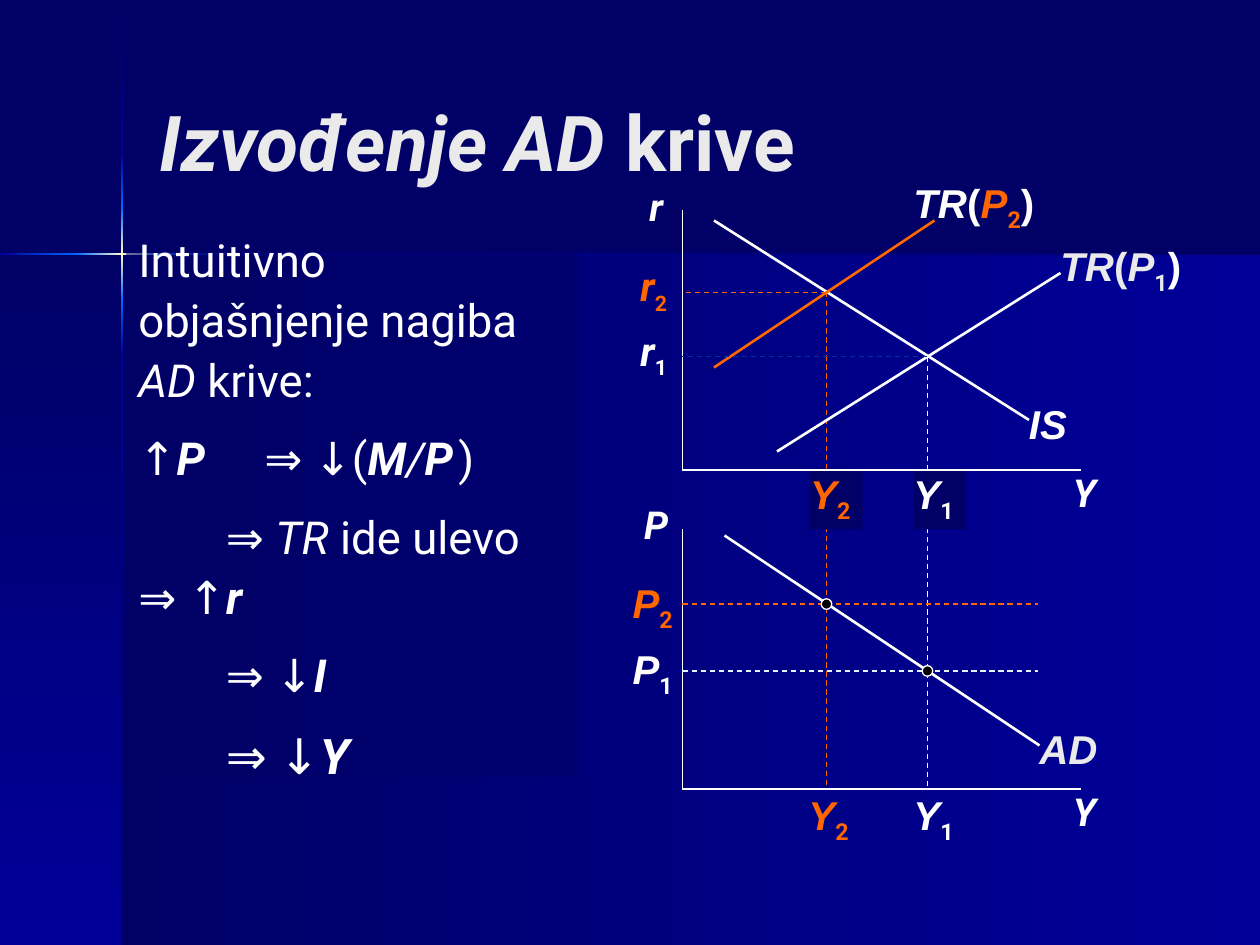
from itertools import pairwise

from lxml.etree import SubElement
from pptx import Presentation
from pptx.dml.color import RGBColor
from pptx.enum.dml import MSO_LINE
from pptx.enum.shapes import MSO_CONNECTOR, MSO_SHAPE
from pptx.enum.text import MSO_ANCHOR, MSO_AUTO_SIZE, PP_ALIGN
from pptx.oxml.ns import qn
from pptx.util import Pt

COLORS = {
    "navy": "000066", "blue": "000099", "glow": "0066FF", "spark": "FFFFCC",
    "white": "FFFFFF", "pale": "EAEAEA", "orange": "FF6600", "ice": "E0F5FF",
    "faint": "003399", "black": "000000",
}
AXIS_X, AXIS_END = 390, 618
Y1, Y2 = 530, 472.3
R1, R2 = 203.8, 167
P1, P2 = 383.4, 345.2
BI = {"bold": True, "italic": True}


def rgb(name):
    return RGBColor.from_string(COLORS[name])


def write(paragraph, text, size=26, font="Roboto", color="white",
          bold=False, italic=False, baseline=0):
    run = paragraph.add_run()
    run.text = text
    run.font.size = Pt(size)
    run.font.name = font
    run.font.color.rgb = rgb(color)
    run.font.bold = bold
    run.font.italic = italic
    if baseline:
        run.font._element.set("baseline", str(baseline * 1000))


def add_panel(slide, box, fill=None, kind=MSO_SHAPE.RECTANGLE):
    panel = slide.shapes.add_shape(kind, *map(Pt, box))
    panel.shadow.inherit = False
    panel.line.fill.background()
    if fill:
        panel.fill.solid()
        panel.fill.fore_color.rgb = rgb(fill)
    return panel


def add_gradient(slide, box, names, vertical=False):
    band = add_panel(slide, box)
    band.fill.gradient()
    band.fill.gradient_angle = 270 if vertical else 0
    stops = band._element.spPr.find(qn("a:gradFill")).find(qn("a:gsLst"))
    for stop in list(stops):
        stops.remove(stop)
    for index, name in enumerate(names):
        position = 100000 * index // (len(names) - 1)
        stop = SubElement(stops, qn("a:gs"), pos=str(position))
        SubElement(stop, qn("a:srgbClr"), val=COLORS[name])


def add_line(slide, start, end, color="white", width=1.5, dashed=False):
    line = slide.shapes.add_connector(
        MSO_CONNECTOR.STRAIGHT, *map(Pt, (*start, *end)))
    line.line.color.rgb = rgb(color)
    line.line.width = Pt(width)
    if dashed:
        line.line.dash_style = MSO_LINE.DASH
    SubElement(line._element.spPr, qn("a:effectLst"))


def add_guide(slide, start, end, color):
    add_line(slide, start, end, color, 0.75, dashed=True)


def set_frame(frame, insets=(0, 0, 0, 0), anchor=MSO_ANCHOR.TOP):
    frame.word_wrap = True
    frame.vertical_anchor = anchor
    (frame.margin_left, frame.margin_top,
     frame.margin_right, frame.margin_bottom) = map(Pt, insets)
    return frame.paragraphs[0]


def add_text(slide, box, insets=(0, 0, 0, 0), anchor=MSO_ANCHOR.TOP):
    frame = slide.shapes.add_textbox(*map(Pt, box)).text_frame
    frame.auto_size = MSO_AUTO_SIZE.NONE
    return set_frame(frame, insets, anchor)


def add_label(slide, left, top, name, sub="", color="white", font="Arial",
              sub_size=23, mask=None, width=30):
    box = (left, top, width, 34.6 if mask else 27.4)
    if mask:
        label = set_frame(add_panel(slide, box, mask).text_frame)
        label.alignment = PP_ALIGN.LEFT
    else:
        label = add_text(slide, box)
    write(label, name, 23, font, color, **BI)
    if sub:
        write(label, sub, sub_size, color=color, bold=True, baseline=-25)


def add_tr_label(slide, left, top, sub, color, price_color):
    label = add_text(slide, (left, top, 78, 27.4))
    write(label, "TR", 23, "Arial", color, **BI)
    write(label, "(", 23, "Arial", color, bold=True)
    write(label, "P", 23, "Arial", price_color, **BI)
    write(label, sub, 23, color=price_color, bold=True, baseline=-25)
    write(label, ")", 23, "Arial", bold=True)


def add_axes(slide, top, vertical_name):
    bottom = top + 148.3
    add_line(slide, (AXIS_X, top), (AXIS_X, bottom), width=1)
    add_line(slide, (AXIS_X, bottom), (AXIS_END, bottom), width=1)
    insets = (7.2, 3.6, 7.2, 3.6)
    horizontal = add_text(slide, (606, bottom - 4.3, 42, 33.8), insets)
    write(horizontal, "Y", 22, **BI)
    vertical = add_text(slide, (360, top - 19.5, 30, 33.8), insets)
    vertical.alignment = PP_ALIGN.CENTER
    write(vertical, vertical_name, 22, **BI)


def add_backdrop(slide):
    slide.background.fill.solid()
    slide.background.fill.fore_color.rgb = rgb("navy")
    add_gradient(slide, (69.8, 145.4, 650.2, 394.6), ("navy", "blue"))
    add_gradient(slide, (0, 145.4, 69.8, 394.6), ("navy", "blue"), True)
    beam = [("navy", "blue"), ("blue", "glow"), ("glow", "spark", "glow"),
            ("glow", "blue"), ("blue", "navy")]
    for (top, bottom), names in zip(pairwise((0.7, 87.1, 118.8, 171.4, 203, 540)), beam):
        add_gradient(slide, (69.1, top, 1.4, bottom - top), names, True)
    for (left, right), names in zip(pairwise((0, 43.5, 95.8, 127.4, 720)), beam[1:]):
        add_gradient(slide, (left, 144.6, right - left, 1.1), names)


def add_explanation(slide):
    panel = add_panel(slide, (72, 126, 258, 318), "navy")
    color = panel._element.spPr.find(qn("a:solidFill"))[0]
    SubElement(color, qn("a:alpha"), val="50000")
    frame = panel.text_frame
    set_frame(frame, (7.2, 3.6, 7.2, 3.6))
    italic, big = {"italic": True}, {"size": 28}
    steps = [
        (50, [("Intuitivno objašnjenje nagiba ", {}), ("AD ", italic), ("krive:", {})]),
        (72, [("↑", {}), ("P", BI), ("\t⇒ ↓(", {}), ("M", BI), ("/", italic),
              ("P", BI), (" ", {"size": 12}), (")", {})]),
        (50, [("\t⇒ ", {}), ("TR ", italic), ("ide ulevo\t⇒ ↑", {}), ("r", BI)]),
        (50, [("\t⇒ ↓", {}), ("I", BI)]),
        (50, [("\t⇒ ↓", big), ("Y", BI | big)]),
    ]
    for index, (tab, runs) in enumerate(steps):
        step = frame.add_paragraph() if index else frame.paragraphs[0]
        step.alignment = PP_ALIGN.LEFT
        step.line_spacing = 1.1
        if index:
            step.space_before = Pt(10.4)
        tabs = SubElement(step._p.get_or_add_pPr(), qn("a:tabLst"))
        SubElement(tabs, qn("a:tab"), pos=str(Pt(tab)), algn="l")
        for text, style in runs:
            write(step, text, **style)


def main():
    deck = Presentation()
    deck.slide_width, deck.slide_height = Pt(720), Pt(540)
    slide = deck.slides.add_slide(deck.slide_layouts[6])
    add_backdrop(slide)

    add_guide(slide, (Y1, R1), (Y1, 450.8), "white")
    add_guide(slide, (Y2, R2), (Y2, 450.8), "orange")
    add_label(slide, 522, 268, "Y", "1", mask="navy")
    add_label(slide, 463, 268, "Y", "2", "orange", mask="navy")

    title = add_text(slide, (84, 24, 594, 113), (7.2, 3.6, 7.2, 3.6), MSO_ANCHOR.MIDDLE)
    write(title, "Izvođenje AD ", 44, color="pale", **BI)
    write(title, "krive", 44, color="pale", bold=True)

    add_axes(slide, 120.3, "r")
    add_axes(slide, 302.5, "P")

    add_line(slide, (408, 126), (588, 240))
    add_label(slide, 588, 228, "IS")
    add_tr_label(slide, 606, 138, "1", "pale", "pale")
    add_line(slide, (444, 258), (606, 156))
    add_tr_label(slide, 522, 102, "2", "white", "orange")
    add_line(slide, (408, 210), (534, 126), "orange")
    add_line(slide, (414, 306), (594, 426))
    add_label(slide, 594, 414, "AD", color="pale", width=36)

    for price, sub, guide, color in ((P1, "1", "ice", "white"), (P2, "2", "orange", "orange")):
        add_guide(slide, (AXIS_X, price), (593, price), guide)
        add_label(slide, 361.5, price - 15, "P", sub, color)
    add_label(slide, 462, 451.5, "Y", "2", "orange")
    add_label(slide, 522, 451.5, "Y", "1")
    for rate, output, sub, guide, color in (
            (R2, Y2, "2", "orange", "orange"), (R1, Y1, "1", "faint", "white")):
        add_guide(slide, (output, rate), (AXIS_X, rate), guide)
        add_label(slide, 366, rate - 17.5, "r", sub, color, "Roboto", 21)

    for output, price in ((Y1, P1), (Y2, P2)):
        point = add_panel(slide, (output - 3, price - 3, 6, 6), "black", MSO_SHAPE.OVAL)
        point.line.color.rgb = rgb("white")
        point.line.width = Pt(0.75)
    add_explanation(slide)
    deck.save("out.pptx")


if __name__ == "__main__":
    main()
